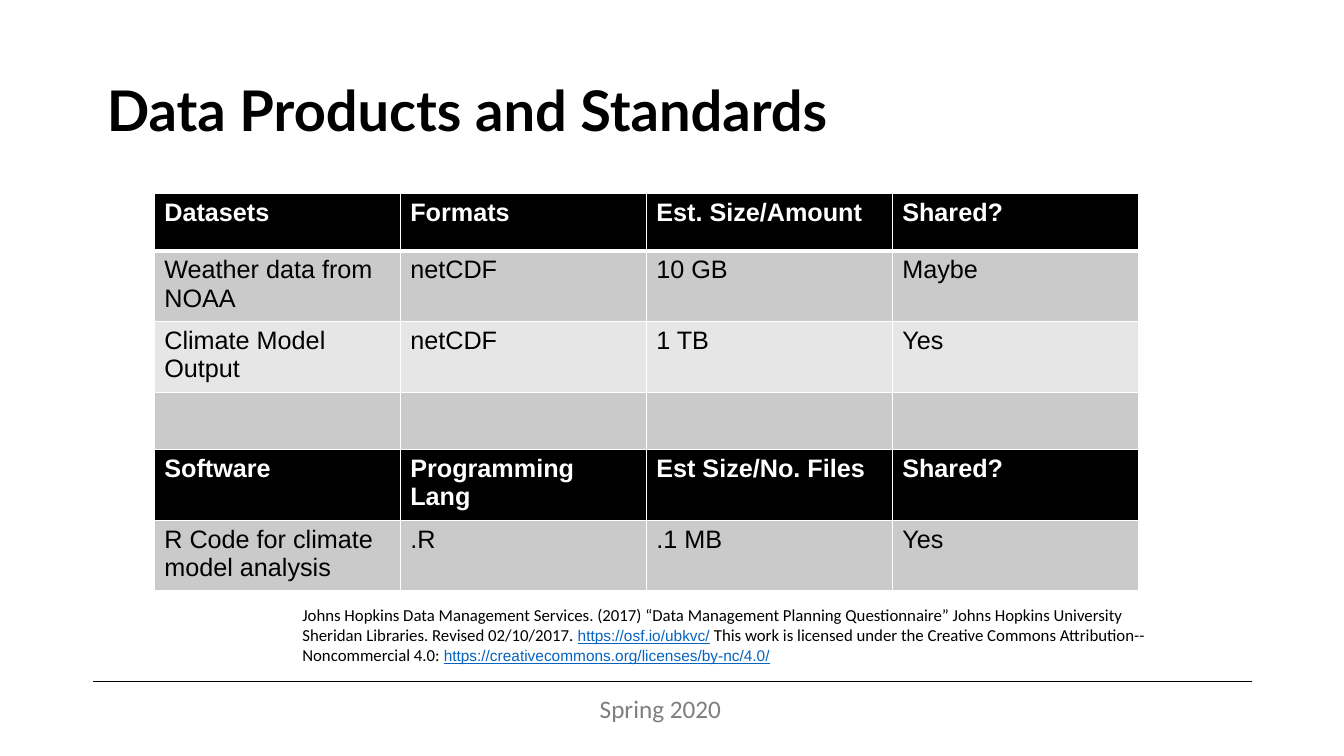
from dataclasses import dataclass

import lxml.etree
import pptx
import pptx.dml.color
import pptx.enum.shapes
import pptx.enum.text
import pptx.oxml.ns
import pptx.slide
import pptx.table
import pptx.text.text
import pptx.util

Inches = pptx.util.Inches
RGBColor = pptx.dml.color.RGBColor

BLACK = RGBColor(0x00, 0x00, 0x00)
WHITE = RGBColor(0xFF, 0xFF, 0xFF)
DARK_BAND = RGBColor(0xCA, 0xCA, 0xCA)
LIGHT_BAND = RGBColor(0xE6, 0xE6, 0xE6)
FOOTER_GRAY = RGBColor(0x7F, 0x7F, 0x7F)
LINK_BLUE = RGBColor(0x05, 0x63, 0xC1)

COLUMN_WIDTH = 2.44
ROW_HEIGHT = 0.57


@dataclass(frozen=True)
class TextStyle:
    font: str
    size: float
    color: RGBColor
    bold: bool = False
    underline: bool = False


@dataclass(frozen=True)
class TableRow:
    texts: tuple[str, ...]
    fill: RGBColor
    style: TextStyle


TITLE = TextStyle("Lato", 40, BLACK, bold=True)
FOOTER = TextStyle("Calibri", 18, FOOTER_GRAY)
HEADING = TextStyle("Arial", 18, WHITE, bold=True)
ENTRY = TextStyle("Arial", 18, BLACK)
CITATION = TextStyle("Calibri", 12, BLACK)
ADDRESS = TextStyle("Arial", 11, LINK_BLUE, underline=True)

ROWS = (
    TableRow(("Datasets", "Formats", "Est. Size/Amount", "Shared?"), BLACK, HEADING),
    TableRow(("Weather data from NOAA", "netCDF", "10 GB", "Maybe"), DARK_BAND, ENTRY),
    TableRow(("Climate Model Output", "netCDF", "1 TB", "Yes"), LIGHT_BAND, ENTRY),
    TableRow(("", "", "", ""), DARK_BAND, ENTRY),
    TableRow(("Software", "Programming Lang", "Est Size/No. Files", "Shared?"), BLACK, HEADING),
    TableRow(("R Code for climate model analysis", ".R", ".1 MB", "Yes"), DARK_BAND, ENTRY),
)

CITATION_PARTS = (
    ("Johns Hopkins Data Management Services. (2017) “Data Management Planning "
     "Questionnaire” Johns Hopkins University Sheridan Libraries. Revised 02/10/2017. ", CITATION),
    ("https://osf.io/ubkvc/", ADDRESS),
    (" This work is licensed under the Creative Commons Attribution--Noncommercial 4.0: ", CITATION),
    ("https://creativecommons.org/licenses/by-nc/4.0/", ADDRESS),
)


def apply_style(font: pptx.text.text.Font, style: TextStyle) -> None:
    font.name = style.font
    font.size = pptx.util.Pt(style.size)
    font.bold = style.bold
    font.underline = style.underline
    font.color.rgb = style.color


def add_title(slide: pptx.slide.Slide) -> None:
    title = slide.shapes.title
    title.left, title.top = Inches(0.96), Inches(0.67)
    title.width, title.height = Inches(11.18), Inches(0.8)
    frame = title.text_frame
    frame.text = "Data Products and Standards"
    frame.auto_size = pptx.enum.text.MSO_AUTO_SIZE.NONE
    frame.vertical_anchor = pptx.enum.text.MSO_ANCHOR.BOTTOM
    paragraph = frame.paragraphs[0]
    paragraph.alignment = pptx.enum.text.PP_ALIGN.LEFT
    paragraph.line_spacing = 0.9
    apply_style(paragraph.runs[0].font, TITLE)


def add_footer(slide: pptx.slide.Slide) -> None:
    rule = slide.shapes.add_connector(
        pptx.enum.shapes.MSO_CONNECTOR.STRAIGHT,
        Inches(0.92), Inches(6.76), Inches(12.42), Inches(6.76))
    rule.line.color.rgb = BLACK
    rule.line.width = pptx.util.Pt(0.75)
    lxml.etree.SubElement(rule._element.spPr, pptx.oxml.ns.qn("a:effectLst"))

    footer = slide.shapes.add_textbox(Inches(5.05), Inches(6.83), Inches(3), Inches(0.4))
    frame = footer.text_frame
    frame.word_wrap = True
    frame.text = "Spring 2020"
    frame.vertical_anchor = pptx.enum.text.MSO_ANCHOR.MIDDLE
    paragraph = frame.paragraphs[0]
    paragraph.alignment = pptx.enum.text.PP_ALIGN.CENTER
    apply_style(paragraph.runs[0].font, FOOTER)


def set_borders(cell: pptx.table._Cell, top: float, bottom: float) -> None:
    """Give the cell white borders; must run before the cell's fill is set."""
    properties = cell._tc.get_or_add_tcPr()
    for side, points in (("L", 1), ("R", 1), ("T", top), ("B", bottom)):
        border = lxml.etree.SubElement(
            properties, pptx.oxml.ns.qn(f"a:ln{side}"), w=str(pptx.util.Pt(points)))
        fill = lxml.etree.SubElement(border, pptx.oxml.ns.qn("a:solidFill"))
        lxml.etree.SubElement(fill, pptx.oxml.ns.qn("a:srgbClr"), val=str(WHITE))


def add_data_table(slide: pptx.slide.Slide) -> None:
    column_count = len(ROWS[0].texts)
    table = slide.shapes.add_table(
        len(ROWS), column_count, Inches(1.53), Inches(1.92),
        Inches(COLUMN_WIDTH * column_count), Inches(ROW_HEIGHT * len(ROWS))).table
    table.first_row = False
    table.horz_banding = False
    for row_index, row in enumerate(ROWS):
        for column_index, text in enumerate(row.texts):
            cell = table.cell(row_index, column_index)
            set_borders(cell, top=3 if row_index == 1 else 1, bottom=3 if row_index == 0 else 1)
            cell.fill.solid()
            cell.fill.fore_color.rgb = row.fill
            cell.text_frame.text = text
            for run in cell.text_frame.paragraphs[0].runs:
                apply_style(run.font, row.style)


def add_citation(slide: pptx.slide.Slide) -> None:
    box = slide.shapes.add_textbox(Inches(2.9), Inches(5.95), Inches(8.65), Inches(0.71))
    box.text_frame.word_wrap = True
    paragraph = box.text_frame.paragraphs[0]
    for text, style in CITATION_PARTS:
        run = paragraph.add_run()
        run.text = text
        apply_style(run.font, style)


def main() -> None:
    presentation = pptx.Presentation()
    presentation.slide_width = Inches(13.33)
    presentation.slide_height = Inches(7.5)
    title_only = presentation.slide_layouts[5]
    slide = presentation.slides.add_slide(title_only)
    add_title(slide)
    add_footer(slide)
    add_data_table(slide)
    add_citation(slide)
    presentation.save("out.pptx")


if __name__ == "__main__":
    main()
